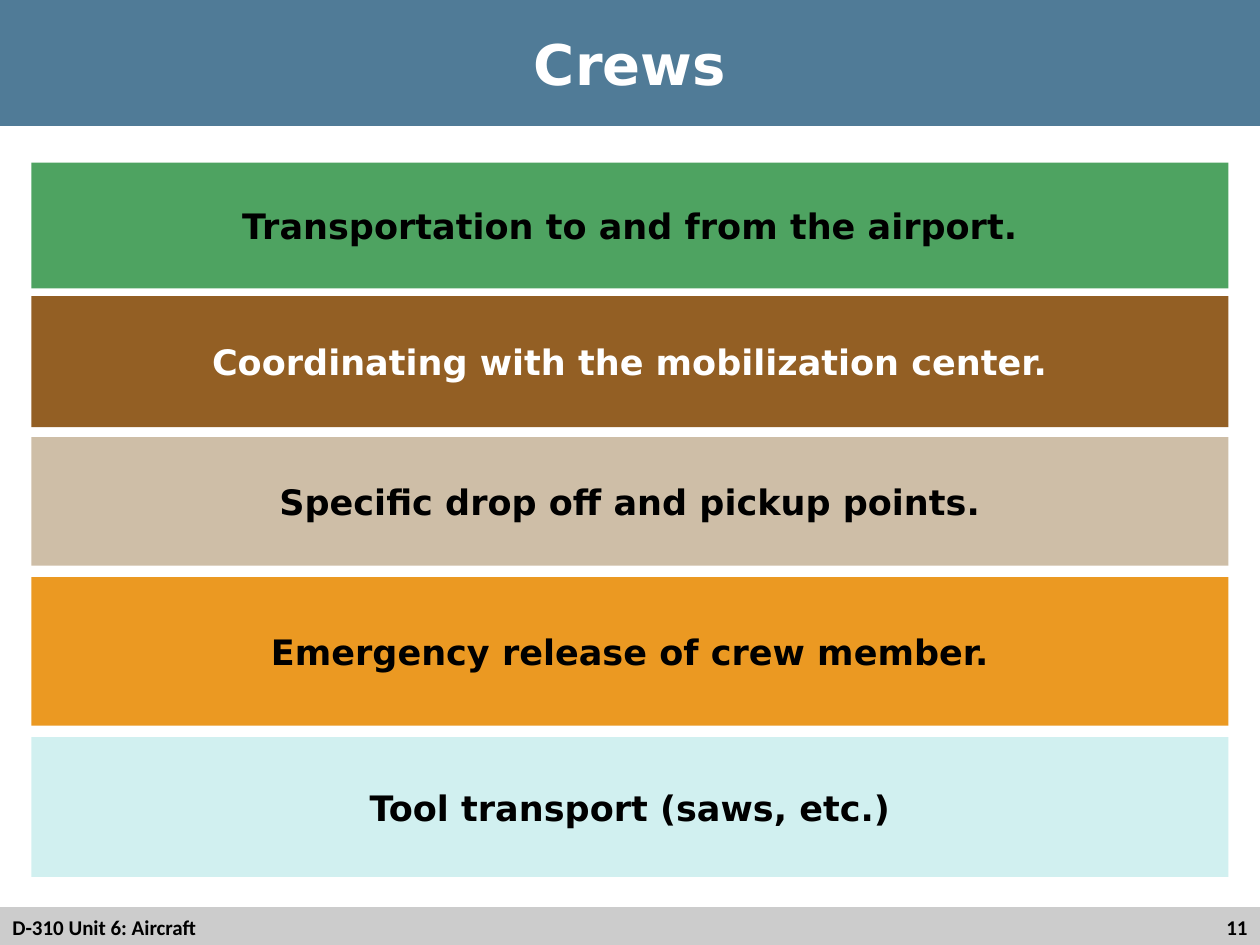
from dataclasses import dataclass

from pptx import Presentation
from pptx.dml.color import RGBColor
from pptx.enum.shapes import MSO_SHAPE
from pptx.enum.text import MSO_ANCHOR, PP_ALIGN
from pptx.util import Inches, Pt

RECT = MSO_SHAPE.RECTANGLE
MIDDLE = MSO_ANCHOR.MIDDLE
LEFT, CENTER, RIGHT = PP_ALIGN.LEFT, PP_ALIGN.CENTER, PP_ALIGN.RIGHT


@dataclass(frozen=True)
class Theme:
    """Hold the colours, fonts and type sizes."""
    black: str = "000000"
    white: str = "FFFFFF"
    gray: str = "CCCCCC"
    blue: str = "507B97"
    green: str = "4EA361"
    brown: str = "935F24"
    tan: str = "CEBEA7"
    orange: str = "EB9922"
    aqua: str = "D1F0F0"
    head: str = "DejaVu Sans"
    foot: str = "Calibri"
    title: int = 32
    body: int = 20
    small: int = 12


THEME = Theme()

BANDS = [
    ("Transportation to and from the airport.", 1.29, 1, THEME.green, THEME.black),
    ("Coordinating with the mobilization center.", 2.35, 1.04, THEME.brown, THEME.white),
    ("Specific drop off and pickup points.", 3.47, 1.02, THEME.tan, THEME.black),
    ("Emergency release of crew member.", 4.58, 1.18, THEME.orange, THEME.black),
    ("Tool transport (saws, etc.)", 5.85, 1.11, THEME.aqua, THEME.black),
]


def write(shape, text, size, face, color, align):
    """Put one bold line of text in a shape."""
    frame = shape.text_frame
    frame.word_wrap = True
    frame.vertical_anchor = MIDDLE
    line = frame.paragraphs[0]
    line.text = text
    line.alignment = align
    font = line.font
    font.name, font.size, font.bold = face, Pt(size), True
    font.color.rgb = RGBColor.from_string(color)


def add_bar(slide, box, fill):
    """Add a flat filled bar without an outline."""
    bar = slide.shapes.add_shape(RECT, *map(Inches, box))
    bar.shadow.inherit = False
    bar.fill.solid()
    bar.fill.fore_color.rgb = RGBColor.from_string(fill)
    bar.line.fill.background()
    return bar


def add_note(slide, box, text, align):
    """Add a line of footer text."""
    note = slide.shapes.add_textbox(*map(Inches, box))
    write(note, text, THEME.small, THEME.foot, THEME.black, align)


def main():
    """Build the slide and save it."""
    deck = Presentation()
    deck.slide_width, deck.slide_height = Inches(10), Inches(7.5)
    slide = deck.slides.add_slide(deck.slide_layouts[6])

    add_bar(slide, (0, 7.2, 10, 0.32), THEME.gray)
    add_note(slide, (0, 7.2, 6, 0.32), "D-310 Unit 6: Aircraft", LEFT)
    add_note(slide, (7.67, 7.2, 2.33, 0.32), "11", RIGHT)

    title = add_bar(slide, (0, 0, 10, 1), THEME.blue)
    write(title, "Crews", THEME.title, THEME.head, THEME.white, CENTER)

    for text, top, height, fill, color in BANDS:
        band = add_bar(slide, (0.25, top, 9.5, height), fill)
        write(band, text, THEME.body, THEME.head, color, CENTER)

    deck.save("out.pptx")


if __name__ == "__main__":
    main()
